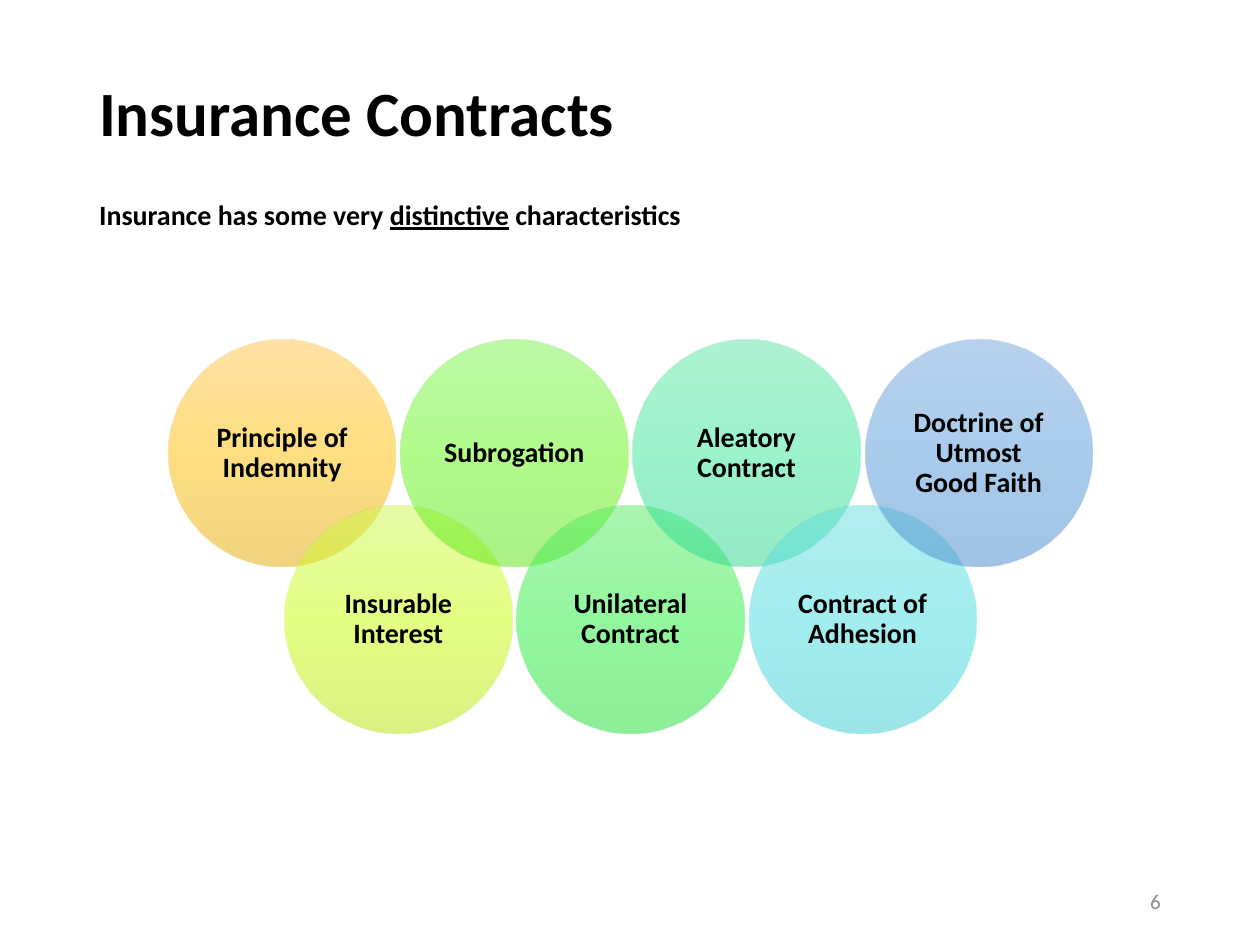
from dataclasses import dataclass

from lxml import etree
from pptx import Presentation
from pptx.dml.color import RGBColor
from pptx.enum import shapes, text
from pptx.oxml import ns
from pptx.util import Cm, Pt


@dataclass(frozen=True)
class Theme:
    font: str = "Calibri"
    ink: str = "000000"
    muted: str = "8C8C8C"
    title: int = 36
    body: int = 16
    small: int = 12


theme = Theme()


def write(frame, *parts, size=theme.body, color=theme.ink, bold=True, underlined=(),
          align=text.PP_ALIGN.LEFT, anchor=text.MSO_ANCHOR.MIDDLE, spacing=0.9, inset=None):
    """Fill a text frame with one paragraph made of the given parts."""
    frame.word_wrap = True
    frame.vertical_anchor = anchor
    if inset is not None:
        frame.margin_left = frame.margin_right = inset
        frame.margin_top = frame.margin_bottom = inset
    para = frame.paragraphs[0]
    para.alignment = align
    para.line_spacing = spacing
    for part in parts:
        span = para.add_run()
        span.text = part
        span.font.name = theme.font
        span.font.size = Pt(size)
        span.font.bold = bold
        span.font.underline = part in underlined
        span.font.color.rgb = RGBColor.from_string(color)


def fill_gradient(shape, colors, opacity=50):
    """Blend evenly spaced, translucent colours from top to bottom."""
    shape.fill.gradient()
    shape.fill.gradient_angle = 270
    stops = shape.element.spPr.find(".//" + ns.qn("a:gsLst"))
    for stop in list(stops):
        stops.remove(stop)
    for index, color in enumerate(colors):
        position = index * 100000 // (len(colors) - 1)
        stop = etree.SubElement(stops, ns.qn("a:gs"), pos=str(position))
        tint = etree.SubElement(stop, ns.qn("a:srgbClr"), val=color)
        etree.SubElement(tint, ns.qn("a:alpha"), val=str(opacity * 1000))


deck = Presentation()
deck.slide_width, deck.slide_height = Cm(25.4), Cm(19.05)
page = deck.slides.add_slide(deck.slide_layouts[6])

# Title and lead sentence
margin, content_width = Cm(1.75), Cm(21.9)
box = page.shapes.add_textbox(margin, Cm(1.02), content_width, Cm(2.66))
write(box.text_frame, "Insurance Contracts", size=theme.title)
box = page.shapes.add_textbox(margin, Cm(3.93), content_width, Cm(12.47))
write(box.text_frame, "Insurance has some very ", "distinctive", " characteristics",
      underlined=("distinctive",), anchor=text.MSO_ANCHOR.TOP)

# Overlapping circles, alternating between an upper and a lower row
characteristics = [
    ("Principle of Indemnity", ("FFC64B", "FFC000", "E3AB00")),
    ("Insurable Interest", ("CEFA4C", "CCFF08", "B7E505")),
    ("Subrogation", ("7AF350", "63F916", "56E50C")),
    ("Unilateral Contract", ("56EC62", "27F13E", "18E02F")),
    ("Aleatory Contract", ("5EE6A6", "37E99C", "27D88C")),
    ("Contract of Adhesion", ("67DDE0", "46DEE2", "36CDD1")),
    ("Doctrine of Utmost Good Faith", ("71A6DB", "559BDB", "448ACA")),
]
first_left, step, diameter = 3.4, 2.34, 4.58
row_tops = (6.85, 10.2)
chain = page.shapes.add_group_shape()
for index, (label, colors) in enumerate(characteristics):
    circle = chain.shapes.add_shape(
        shapes.MSO_SHAPE.OVAL, Cm(first_left + index * step), Cm(row_tops[index % 2]),
        Cm(diameter), Cm(diameter))
    circle.shadow.inherit = False
    circle.line.fill.background()
    fill_gradient(circle, colors)
    write(circle.text_frame, label, align=text.PP_ALIGN.CENTER, inset=Cm(0.19))

# Page number
box = page.shapes.add_textbox(Cm(17.93), Cm(17.65), Cm(5.72), Cm(1.02))
write(box.text_frame, "6", size=theme.small, color=theme.muted, bold=False,
      align=text.PP_ALIGN.RIGHT, spacing=1.0)

deck.save("out.pptx")
